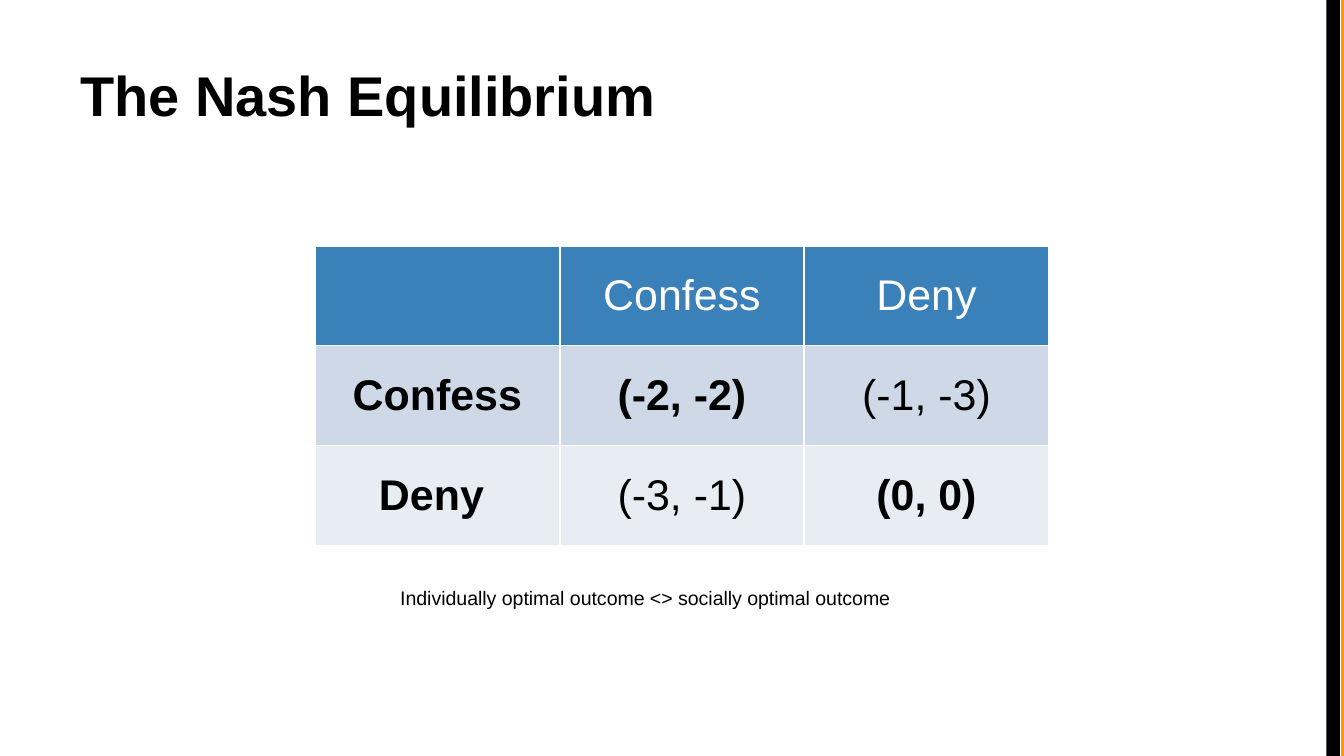
from dataclasses import dataclass

from lxml.etree import SubElement
from pptx import Presentation
from pptx.dml.color import RGBColor
from pptx.enum.shapes import MSO_SHAPE as Shape
from pptx.enum.text import MSO_ANCHOR as Anchor, PP_ALIGN as Align
from pptx.oxml.ns import qn
from pptx.util import Pt

FONT = "Arial"
BLACK, WHITE, ORANGE = "000000", "FFFFFF", "FF9900"
BAR_WIDTH = 7.2
PAGE_WIDTH, PAGE_HEIGHT = 720, 405
COLUMN_WIDTH, ROW_HEIGHT = 131, 53.5


@dataclass(frozen=True)
class Bar:
    left: float
    color: str


@dataclass(frozen=True)
class Label:
    text: str
    left: float
    top: float
    width: float
    height: float
    size: float
    inset: float
    anchor: Anchor
    bold: bool = False
    outline: str | None = None


@dataclass(frozen=True)
class PayoffRow:
    texts: tuple[str, ...]
    bolds: tuple[bool, ...]
    fill: str
    color: str = BLACK


BARS = (Bar(718.56, ORANGE), Bar(710.64, BLACK))
LABELS = (
    Label("The Nash Equilibrium", 36, 16.5, 648, 67.5, 30, 7.2, Anchor.MIDDLE, True, WHITE),
    Label("Individually optimal outcome <> socially optimal outcome",
          207.36, 310.3, 328.3, 20, 10.5, 3.6, Anchor.TOP),
)
ROWS = (
    PayoffRow(("", "Confess", "Deny"), (False, False, False), "3A81BA", WHITE),
    PayoffRow(("Confess", "(-2, -2)", "(-1, -3)"), (True, True, False), "CED8E7"),
    PayoffRow(("Deny ", "(-3, -1)", "(0, 0)"), (True, False, True), "E8EDF3"),
)


def paint(target, color: str) -> None:
    target.solid()
    target.fore_color.rgb = RGBColor.from_string(color)


def style(para, size: float, color: str, bold: bool) -> None:
    para.font.name = FONT
    para.font.size = Pt(size)
    para.font.bold = bold
    paint(para.font.fill, color)


def draw_bar(page, bar: Bar) -> None:
    box = page.shapes.add_shape(Shape.RECTANGLE, Pt(bar.left), 0, Pt(BAR_WIDTH), Pt(PAGE_HEIGHT))
    box.shadow.inherit = False
    paint(box.fill, bar.color)
    box.line.fill.background()


def draw_label(page, label: Label) -> None:
    box = page.shapes.add_textbox(Pt(label.left), Pt(label.top), Pt(label.width), Pt(label.height))
    if label.outline:
        paint(box.line.fill, label.outline)
        box.line.width = Pt(0.75)
    frame = box.text_frame
    frame.word_wrap = True
    frame.vertical_anchor = label.anchor
    frame.margin_left = frame.margin_right = Pt(7.2)
    frame.margin_top = frame.margin_bottom = Pt(label.inset)
    para = frame.paragraphs[0]
    para.text = label.text
    style(para, label.size, BLACK, label.bold)


def add_borders(cell, color: str, width: float) -> None:
    properties = cell._tc.get_or_add_tcPr()
    for side in ("lnL", "lnR", "lnT", "lnB"):
        line = SubElement(properties, qn(f"a:{side}"), w=str(Pt(width)))
        fill = SubElement(line, qn("a:solidFill"))
        SubElement(fill, qn("a:srgbClr"), val=color)


def fill_cell(cell, text: str, bold: bool, row: PayoffRow) -> None:
    add_borders(cell, WHITE, 1)
    paint(cell.fill, row.fill)
    cell.vertical_anchor = Anchor.MIDDLE
    cell.margin_left = cell.margin_right = Pt(4.5)
    cell.margin_top = cell.margin_bottom = Pt(2.25)
    para = cell.text_frame.paragraphs[0]
    para.text = text
    para.alignment = Align.CENTER
    style(para, 23, row.color, bold)


def draw_payoffs(page, rows: tuple[PayoffRow, ...], left: float, top: float) -> None:
    count = len(rows[0].texts)
    table = page.shapes.add_table(len(rows), count, Pt(left), Pt(top),
                                  Pt(count * COLUMN_WIDTH), Pt(len(rows) * ROW_HEIGHT)).table
    for column in table.columns:
        column.width = Pt(COLUMN_WIDTH)
    for line, row in zip(table.rows, rows):
        line.height = Pt(ROW_HEIGHT)
        for cell, text, bold in zip(line.cells, row.texts, row.bolds):
            fill_cell(cell, text, bold, row)


def main() -> None:
    deck = Presentation()
    deck.slide_width, deck.slide_height = Pt(PAGE_WIDTH), Pt(PAGE_HEIGHT)
    page = deck.slides.add_slide(deck.slide_layouts[6])
    paint(page.background.fill, WHITE)
    for bar in BARS:
        draw_bar(page, bar)
    title, caption = LABELS
    draw_label(page, title)
    draw_payoffs(page, ROWS, 168.9, 131.7)
    draw_label(page, caption)
    deck.save("out.pptx")


if __name__ == "__main__":
    main()
